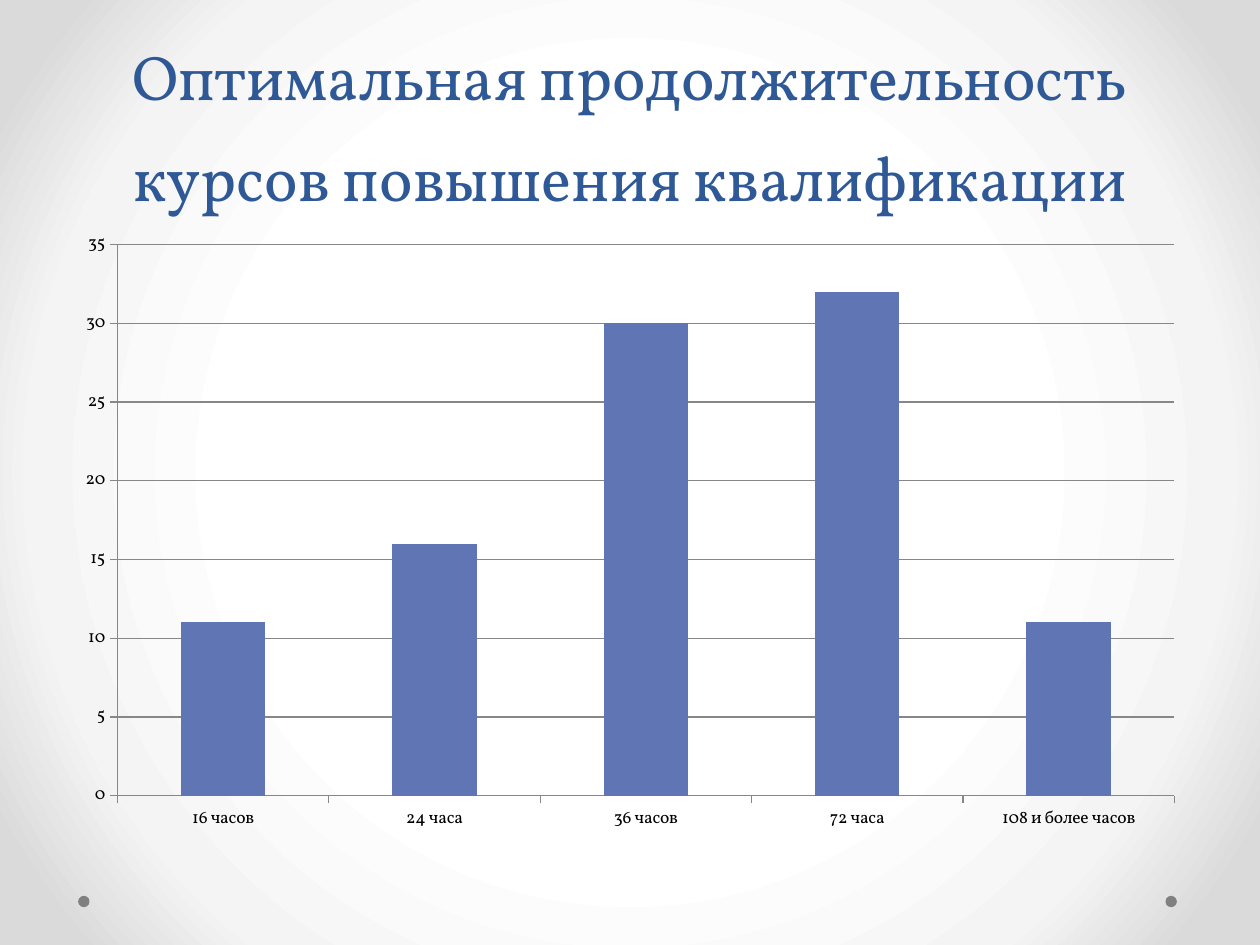
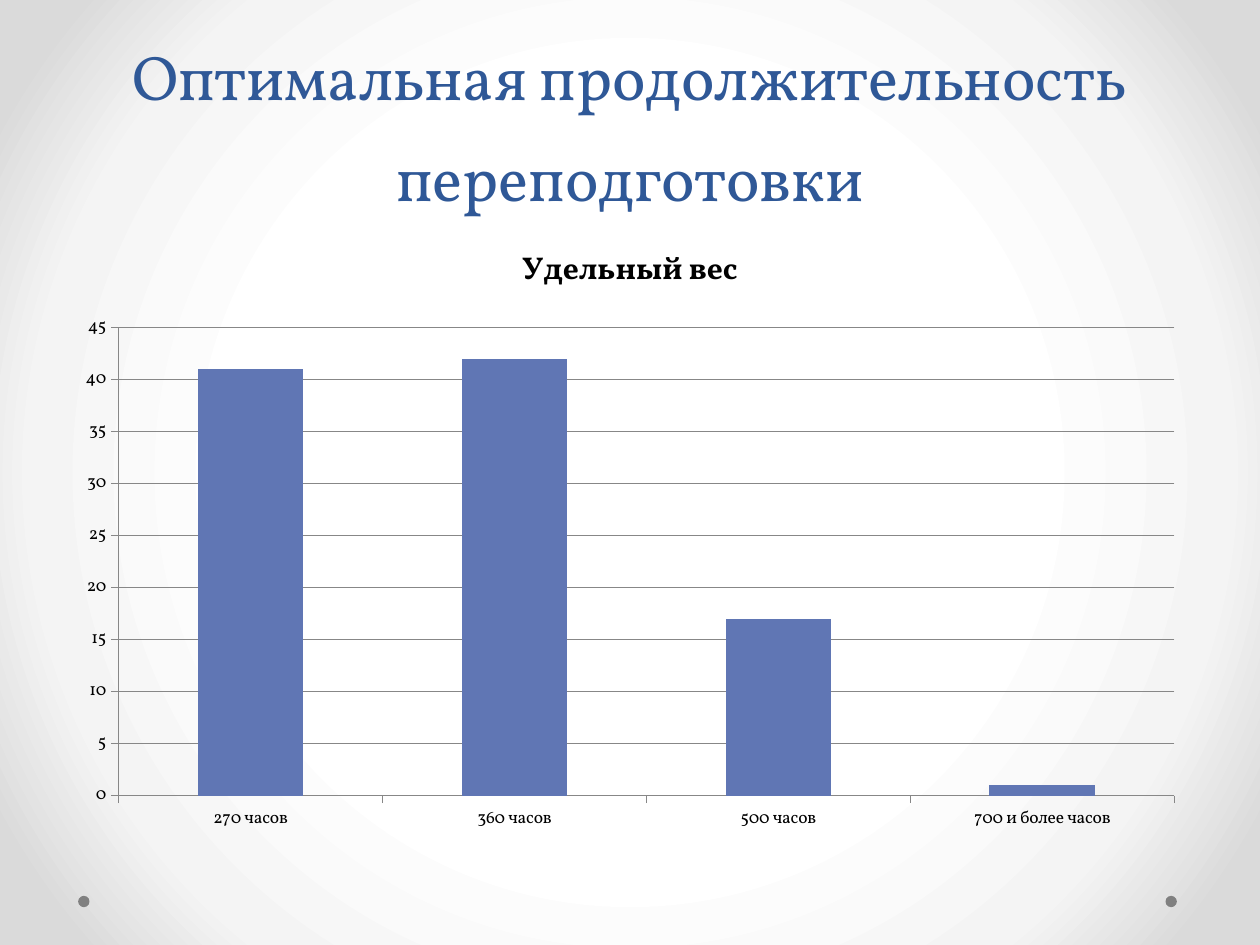
from pptx import Presentation
from pptx.chart.data import CategoryChartData
from pptx.dml.color import RGBColor
from pptx.enum.chart import XL_CHART_TYPE as ChartType, XL_TICK_MARK as TickMark
from pptx.enum.shapes import MSO_SHAPE as Shape
from pptx.enum.text import MSO_ANCHOR as Anchor, MSO_AUTO_SIZE as AutoSize, PP_ALIGN as Align
from pptx.oxml import parse_xml
from pptx.oxml.ns import nsdecls, qn
from pptx.util import Inches, Pt

SLIDES = [
    {
        "title": "Оптимальная продолжительность курсов повышения квалификации",
        "series": "Series 1",
        "chart_title": None,
        "shares": {"16 часов": 11, "24 часа": 16, "36 часов": 30,
                   "72 часа": 32, "108 и более часов": 11},
        "axis_max": 35,
    },
    {
        "title": "Оптимальная продолжительность переподготовки",
        "series": "Удельный вес",
        "chart_title": "Удельный вес",
        "shares": {"270 часов": 41, "360 часов": 42, "500 часов": 17,
                   "700 и более часов": 1},
        "axis_max": 45,
    },
]

FONT = "Vollkorn"
TITLE_BLUE = RGBColor(0x2F, 0x58, 0x97)
BAR_BLUE = RGBColor(0x60, 0x76, 0xB4)
DOT_GRAY = RGBColor(0x80, 0x80, 0x80)
LINE_GRAY = RGBColor(0x87, 0x87, 0x87)
BLACK = RGBColor(0, 0, 0)
BACKDROP = [(50, "FFFFFF"), (76, "F4F4F4"), (92, "DADADA")]

MARGIN, CONTENT_WIDTH = 0.5, 9
TITLE_HEIGHT, CHART_HEIGHT = 1.75, 4.95
DOT_LEFTS, DOT_TOP, DOT_SIZE = (0.62, 9.25), 7.11, 0.09


def set_backdrop(master):
    """Give the master a radial gradient that darkens towards the corners."""
    master.background.fill.solid()
    stops = "".join(f'<a:gs pos="{pos * 1000}"><a:srgbClr val="{color}"/></a:gs>'
                    for pos, color in BACKDROP)
    gradient = parse_xml(
        f'<a:gradFill {nsdecls("a")} rotWithShape="1"><a:gsLst>{stops}</a:gsLst>'
        '<a:path path="circle"><a:fillToRect l="50000" t="50000" r="50000" b="50000"/>'
        '</a:path></a:gradFill>')
    background = master.element.find(".//" + qn("p:bgPr"))
    background.replace(background[0], gradient)


def add_dots(slide):
    for left in DOT_LEFTS:
        dot = slide.shapes.add_shape(Shape.OVAL, Inches(left), Inches(DOT_TOP),
                                     Inches(DOT_SIZE), Inches(DOT_SIZE))
        dot.shadow.inherit = False
        dot.fill.solid()
        dot.fill.fore_color.rgb = DOT_GRAY
        dot.line.fill.background()


def style_font(font, size, color):
    font.name = FONT
    font.size = Pt(size)
    font.color.rgb = color


def fill_title(slide, text):
    title = slide.shapes.title
    title.left, title.top = Inches(MARGIN), Inches(0)
    title.width, title.height = Inches(CONTENT_WIDTH), Inches(TITLE_HEIGHT)
    frame = title.text_frame
    frame.text = text
    frame.word_wrap = True
    frame.auto_size = AutoSize.NONE
    frame.vertical_anchor = Anchor.BOTTOM
    paragraph = frame.paragraphs[0]
    paragraph.alignment = Align.CENTER
    paragraph.line_spacing = Pt(58)
    style_font(paragraph.font, 36, TITLE_BLUE)


def style_line(line):
    line.color.rgb = LINE_GRAY
    line.width = Pt(0.75)


def add_share_chart(slide, content):
    shares = CategoryChartData()
    shares.categories = list(content["shares"])
    shares.add_series(content["series"], list(content["shares"].values()))
    chart = slide.shapes.add_chart(
        ChartType.COLUMN_CLUSTERED, Inches(MARGIN), Inches(TITLE_HEIGHT),
        Inches(CONTENT_WIDTH), Inches(CHART_HEIGHT), shares).chart
    style_font(chart.font, 10, BLACK)
    chart.has_legend = False

    chart.has_title = content["chart_title"] is not None
    if chart.has_title:
        heading = chart.chart_title.text_frame
        heading.text = content["chart_title"]
        style_font(heading.paragraphs[0].font, 18, BLACK)
        heading.paragraphs[0].font.bold = True

    for axis in (chart.category_axis, chart.value_axis):
        axis.major_tick_mark = TickMark.OUTSIDE
        axis.minor_tick_mark = TickMark.NONE
        style_line(axis.format.line)
    scale = chart.value_axis
    scale.minimum_scale, scale.maximum_scale, scale.major_unit = 0, content["axis_max"], 5
    scale.has_major_gridlines = True
    style_line(scale.major_gridlines.format.line)

    plot = chart.plots[0]
    plot.gap_width = 150
    plot.vary_by_categories = False
    bars = plot.series[0].format.fill
    bars.solid()
    bars.fore_color.rgb = BAR_BLUE


def main():
    prs = Presentation()
    prs.slide_width, prs.slide_height = Inches(10), Inches(7.5)
    set_backdrop(prs.slide_master)
    title_only = prs.slide_layouts.get_by_name("Title Only")
    for content in SLIDES:
        slide = prs.slides.add_slide(title_only)
        add_dots(slide)
        fill_title(slide, content["title"])
        add_share_chart(slide, content)
    prs.save("out.pptx")


if __name__ == "__main__":
    main()
